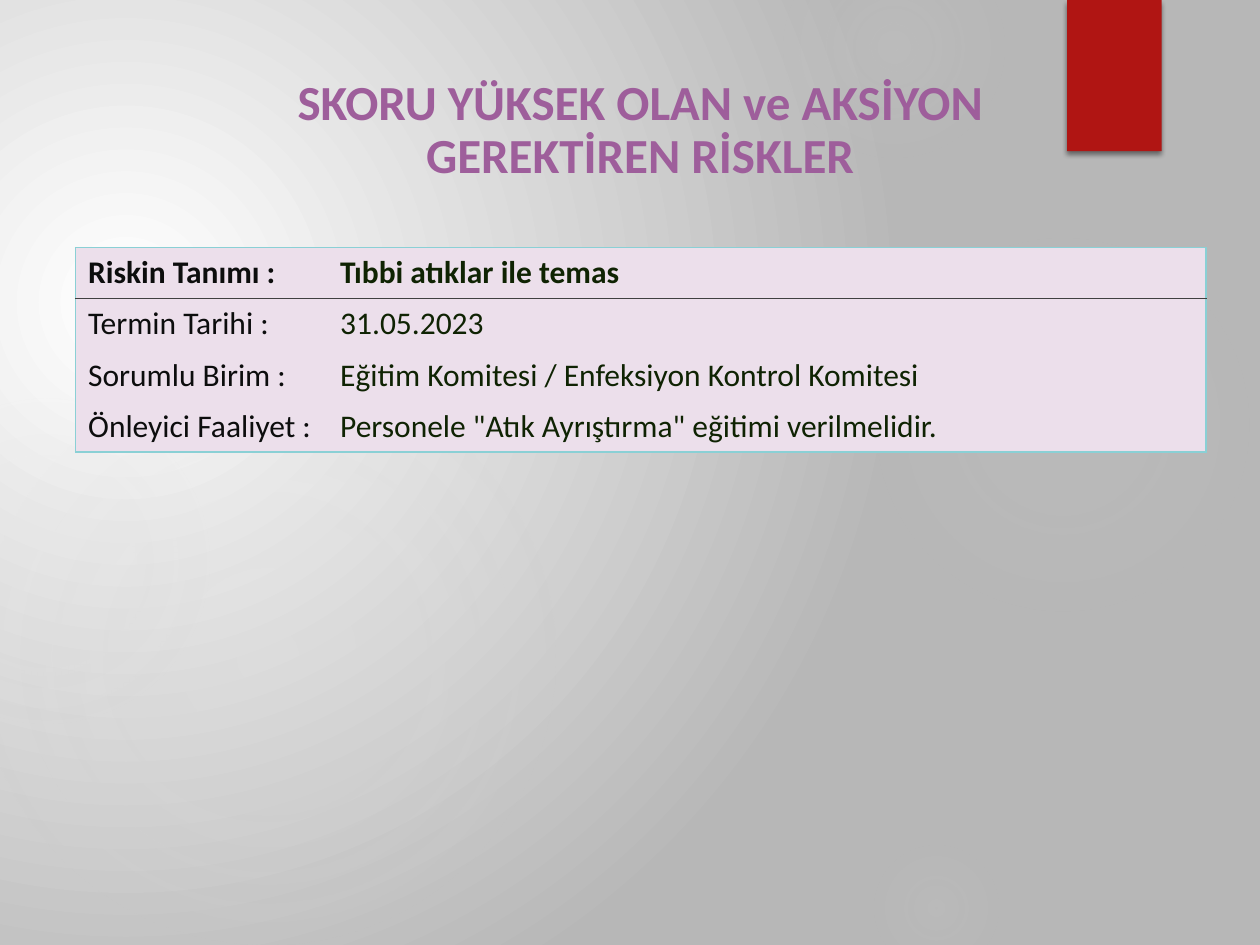
from typing import NamedTuple

from lxml.etree import SubElement
from pptx import Presentation
from pptx.dml.color import RGBColor
from pptx.enum.shapes import MSO_SHAPE
from pptx.enum.text import MSO_ANCHOR, MSO_AUTO_SIZE, PP_ALIGN
from pptx.oxml import parse_xml
from pptx.oxml.ns import nsdecls, qn
from pptx.util import Inches, Pt

WIDE, HIGH = Inches(10), Inches(7.5)
FONT = "Calibri"
HUES = {
    "white": "FFFFFF", "gray": "B7B7B7", "glow": "D9D9D9", "red": "B01513",
    "title": "9E5E9B", "cell": "ECDFEB", "edge": "8AD0D5", "rule": "404040",
    "label": "0C0D0D", "value": "0F2303", "shade": "000000",
}


class Stop(NamedTuple):
    pos: int
    hue: str
    alpha: int = 100


class Glow(NamedTuple):
    left: float
    top: float
    size: float
    inner: int
    mid: int
    end: int


class Row(NamedTuple):
    label: str
    value: str


GLOWS = [
    Glow(68.9, 24.4, 30.8, 7, 6, 69),
    Glow(62.2, -6.67, 17.5, 14, 7, 73),
    Glow(68.9, 88.9, 10.8, 9, 5, 66),
    Glow(-1.7, 38.9, 45.8, 11, 10, 75),
    Glow(-9.2, 42.2, 25.8, 8, 8, 72),
]
ROWS = [
    Row("Riskin Tanımı :", "Tıbbi atıklar ile temas"),
    Row("Termin Tarihi :", "31.05.2023"),
    Row("Sorumlu Birim :", "Eğitim Komitesi / Enfeksiyon Kontrol Komitesi"),
    Row("Önleyici Faaliyet :", 'Personele "Atık Ayrıştırma" eğitimi verilmelidir.'),
]


def across(share: float) -> int:
    return round(WIDE * share / 100)


def down(share: float) -> int:
    return round(HIGH * share / 100)


def rgb(name: str) -> RGBColor:
    return RGBColor.from_string(HUES[name])


def radial(stops: list[Stop], rect: tuple[int, int, int, int]):
    marks = "".join(
        f'<a:gs pos="{s.pos * 1000}"><a:srgbClr val="{HUES[s.hue]}">'
        f'<a:alpha val="{s.alpha * 1000}"/></a:srgbClr></a:gs>'
        for s in stops
    )
    sides = " ".join(f'{k}="{v * 1000}"' for k, v in zip("ltrb", rect))
    return parse_xml(
        f'<a:gradFill {nsdecls("a")} rotWithShape="1"><a:gsLst>{marks}</a:gsLst>'
        f'<a:path path="circle"><a:fillToRect {sides}/></a:path></a:gradFill>'
    )


def swap(parent, fill) -> None:
    old = parent.find(qn("a:solidFill"))
    parent.replace(old, fill)


def block(slide, kind, left: int, top: int, width: int, height: int):
    shape = slide.shapes.add_shape(kind, left, top, width, height)
    shape.shadow.inherit = False
    shape.fill.solid()
    shape.fill.fore_color.rgb = rgb("red")
    shape.line.fill.background()
    return shape


def shine(slide, glow: Glow) -> None:
    size = across(glow.size)
    shape = block(slide, MSO_SHAPE.OVAL, across(glow.left), down(glow.top), size, size)
    stops = [Stop(0, "glow", glow.inner), Stop(36, "glow", glow.mid), Stop(glow.end, "glow", 0)]
    swap(shape.element.spPr, radial(stops, (50, 50, 50, 50)))


def ribbon(slide) -> None:
    shape = block(slide, MSO_SHAPE.RECTANGLE, across(84.7), 0, across(7.5), down(16))
    cast = SubElement(
        shape.element.spPr.find(qn("a:effectLst")), qn("a:outerShdw"),
        blurRad=str(Pt(3)), dist=str(Pt(2)), dir="5400000", rotWithShape="0",
    )
    tint = SubElement(cast, qn("a:srgbClr"), val=HUES["shade"])
    SubElement(tint, qn("a:alpha"), val="45000")


def head(slide) -> None:
    title = slide.shapes.title
    title.left, title.top = across(22), down(7.73)
    title.width, title.height = across(57.6), down(12.4)
    frame = title.text_frame
    frame.text = "SKORU YÜKSEK OLAN ve AKSİYON GEREKTİREN RİSKLER"
    frame.word_wrap = True
    frame.auto_size = MSO_AUTO_SIZE.NONE
    frame.vertical_anchor = MSO_ANCHOR.BOTTOM
    para = frame.paragraphs[0]
    para.alignment = PP_ALIGN.CENTER
    para.line_spacing = 0.9
    para.space_after = Pt(6)
    style(para, 28, "title", True)
    slide.shapes._spTree.append(title.element)


def style(para, size: int, hue: str, bold: bool) -> None:
    font = para.font
    font.name, font.size, font.bold = FONT, Pt(size), bold
    font.color.rgb = rgb(hue)


def edge(cell, sides: dict[str, str]) -> None:
    props = cell._tc.get_or_add_tcPr()
    for side in "LRTB":
        line = SubElement(props, qn(f"a:ln{side}"), w=str(Pt(1)))
        if side in sides:
            fill = SubElement(line, qn("a:solidFill"))
            SubElement(fill, qn("a:srgbClr"), val=HUES[sides[side]])
        else:
            SubElement(line, qn("a:noFill"))


def grid(slide) -> None:
    last = len(ROWS) - 1
    table = slide.shapes.add_table(
        len(ROWS), 2, across(6), down(26.2), across(89.7), down(21.6)
    ).table
    table.horz_banding = False
    for col, share in zip(table.columns, (20, 69.7)):
        col.width = across(share)
    for r, row in enumerate(ROWS):
        for c, (text, hue) in enumerate(zip(row, ("label", "value"))):
            cell = table.cell(r, c)
            sides = {"LR"[c]: "edge"}
            if r == 0:
                sides |= {"T": "edge", "B": "rule"}
            elif r == 1:
                sides["T"] = "rule"
            if r == last:
                sides["B"] = "edge"
            edge(cell, sides)
            cell.fill.solid()
            cell.fill.fore_color.rgb = rgb("cell")
            cell.text = text
            style(cell.text_frame.paragraphs[0], 18, hue, r == 0)


def main() -> None:
    deck = Presentation()
    deck.slide_width, deck.slide_height = WIDE, HIGH
    slide = deck.slides.add_slide(deck.slide_layouts[5])
    slide.background.fill.solid()
    base = slide.element.find(".//" + qn("p:bgPr"))
    swap(base, radial([Stop(0, "white"), Stop(100, "gray")], (45, 65, 125, 100)))
    for glow in GLOWS:
        shine(slide, glow)
    ribbon(slide)
    head(slide)
    grid(slide)
    deck.save("out.pptx")


if __name__ == "__main__":
    main()
